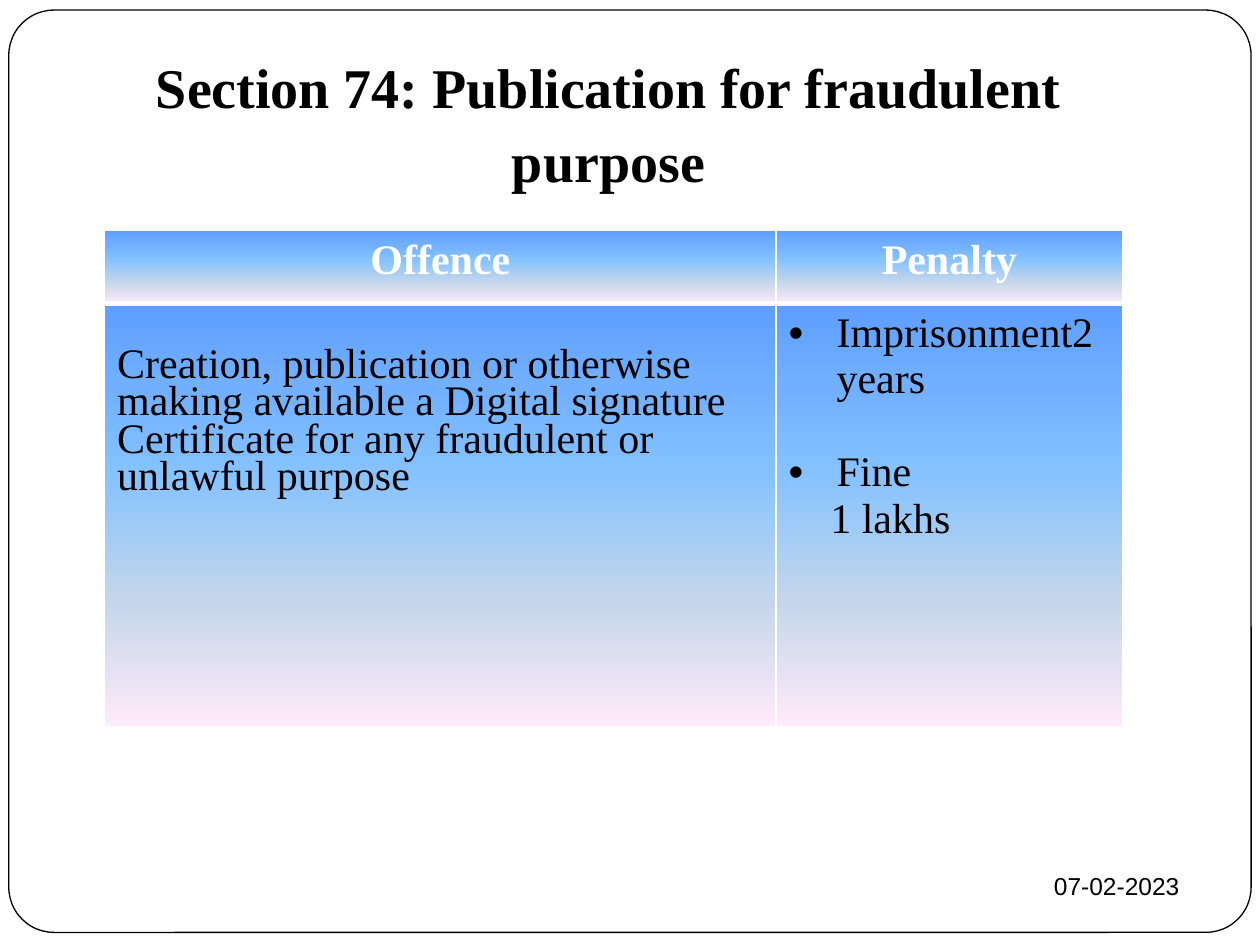
from lxml import etree
from pptx import Presentation
from pptx.dml.color import RGBColor
from pptx.enum.shapes import MSO_SHAPE as Preset
from pptx.enum.text import MSO_ANCHOR as Anchor, MSO_AUTO_SIZE as AutoSize, PP_ALIGN as Align
from pptx.oxml.ns import qn
from pptx.util import Inches, Pt

BLACK = RGBColor(0x00, 0x00, 0x00)
WHITE = RGBColor(0xFF, 0xFF, 0xFF)
GRADIENT = (
    (0, RGBColor(0x5E, 0x9E, 0xFF)),
    (20, RGBColor(0x72, 0xB0, 0xFF)),
    (40, RGBColor(0x85, 0xC2, 0xFF)),
    (70, RGBColor(0xC4, 0xD6, 0xEB)),
    (100, RGBColor(0xFF, 0xEB, 0xFA)),
)
SERIF = "Times New Roman"
TITLE_FONT = {"name": SERIF, "size": Pt(32), "bold": True}
HEADER_FONT = {"name": SERIF, "size": Pt(24), "bold": True}
BODY_FONT = {"name": SERIF, "size": Pt(24), "bold": False}
DATE_FONT = {"name": "Arial", "size": Pt(14), "bold": False}
BULLET = {"left": Inches(0.38), "first": Inches(-0.38), "bullet": True}


def set_values(target, values):
    for name, value in values.items():
        setattr(target, name, value)


def add_color(parent, color):
    fill = etree.SubElement(parent, qn("a:solidFill"))
    etree.SubElement(fill, qn("a:srgbClr"), val=str(color))


class SlideBuilder:
    def __init__(self, presentation):
        self.slide = presentation.slides.add_slide(presentation.slide_layouts[5])
        self.shapes = self.slide.shapes

    def place(self, shape, left, top, width, height):
        set_values(shape, {"left": Inches(left), "top": Inches(top),
                           "width": Inches(width), "height": Inches(height)})

    def add_text(self, paragraph, text, font, color, **layout):
        run = paragraph.add_run()
        run.text = text
        set_values(run.font, font)
        run.font.color.rgb = color
        set_values(paragraph, layout)

    def frame(self, left, top, width, height):
        shape = self.shapes.add_shape(
            Preset.ROUNDED_RECTANGLE, *map(Inches, (left, top, width, height)))
        shape.adjustments[0] = 0.049
        shape.shadow.inherit = False
        shape.fill.solid()
        shape.fill.fore_color.rgb = WHITE
        shape.line.color.rgb = BLACK
        shape.line.width = Pt(0.75)

    def title(self, text, *box):
        title = self.shapes.title
        title.element.getparent().append(title.element)
        self.place(title, *box)
        set_values(title.text_frame, {
            "word_wrap": True, "auto_size": AutoSize.NONE,
            "vertical_anchor": Anchor.BOTTOM, "margin_bottom": Inches(0.1)})
        self.add_text(title.text_frame.paragraphs[0], text, TITLE_FONT, BLACK,
                      alignment=Align.CENTER, line_spacing=1.1)

    def date(self, text, *box):
        shape = self.shapes.add_textbox(*map(Inches, box))
        set_values(shape.text_frame, {"word_wrap": True, "vertical_anchor": Anchor.MIDDLE})
        self.add_text(shape.text_frame.paragraphs[0], text, DATE_FONT, BLACK,
                      alignment=Align.RIGHT)

    def table(self, left, top, widths, heights):
        graphic = self.shapes.add_table(
            len(heights), len(widths), Inches(left), Inches(top),
            Inches(sum(widths)), Inches(sum(heights)))
        table = graphic.table
        for column, width in zip(table.columns, widths):
            column.width = Inches(width)
        for row, height in zip(table.rows, heights):
            row.height = Inches(height)
        for row, bottom_width in zip(table.rows, (3, 1)):
            for cell in row.cells:
                self.style_cell(cell, bottom_width)
        return table

    def style_cell(self, cell, bottom_width):
        properties = cell._tc.get_or_add_tcPr()
        for side, width in (("L", 1), ("R", 1), ("T", 1), ("B", bottom_width)):
            line = etree.SubElement(properties, qn(f"a:ln{side}"), w=str(Pt(width)))
            add_color(line, WHITE)
        fill = etree.SubElement(properties, qn("a:gradFill"), rotWithShape="1")
        stops = etree.SubElement(fill, qn("a:gsLst"))
        for percent, color in GRADIENT:
            stop = etree.SubElement(stops, qn("a:gs"), pos=str(percent * 1000))
            etree.SubElement(stop, qn("a:srgbClr"), val=str(color))
        etree.SubElement(fill, qn("a:lin"), ang="5400000", scaled="0")

    def indent(self, paragraph, left, first=0, bullet=False):
        properties = paragraph._p.get_or_add_pPr()
        properties.set("marL", str(left))
        properties.set("indent", str(first))
        if bullet:
            color = etree.SubElement(properties, qn("a:buClr"))
            etree.SubElement(color, qn("a:srgbClr"), val=str(BLACK))
            etree.SubElement(properties, qn("a:buFont"), typeface="Arial")
            etree.SubElement(properties, qn("a:buChar"), char="•")


def main():
    presentation = Presentation()
    presentation.slide_width = Inches(10)
    presentation.slide_height = Inches(7.5)
    builder = SlideBuilder(presentation)

    builder.frame(0.07, 0.08, 9.86, 7.32)
    builder.title("Section 74: Publication for fraudulent purpose", 0.33, 0.58, 9, 1.06)
    builder.date("07-02-2023", 6.75, 6.77, 2.71, 0.52)

    table = builder.table(0.83, 1.83, (5.33, 2.75), (0.58, 3.36))
    for cell, heading in zip(table.rows[0].cells, ("Offence", "Penalty")):
        builder.add_text(cell.text_frame.paragraphs[0], heading, HEADER_FONT, WHITE,
                         alignment=Align.CENTER)

    offence, penalty = table.rows[1].cells
    offence.margin_top = Inches(0.36)
    builder.add_text(
        offence.text_frame.paragraphs[0],
        "Creation, publication or otherwise making available a Digital signature "
        "Certificate for any fraudulent or unlawful purpose",
        BODY_FONT, BLACK, line_spacing=0.8)

    imprisonment = penalty.text_frame.paragraphs[0]
    fine = penalty.text_frame.add_paragraph()
    amount = penalty.text_frame.add_paragraph()
    builder.add_text(imprisonment, "Imprisonment2 years", BODY_FONT, BLACK)
    builder.add_text(fine, "Fine", BODY_FONT, BLACK, space_before=Pt(26.5))
    builder.add_text(amount, "1 lakhs", BODY_FONT, BLACK)
    for paragraph in (imprisonment, fine):
        builder.indent(paragraph, **BULLET)
    builder.indent(amount, Inches(0.33))

    presentation.save("out.pptx")


if __name__ == "__main__":
    main()
